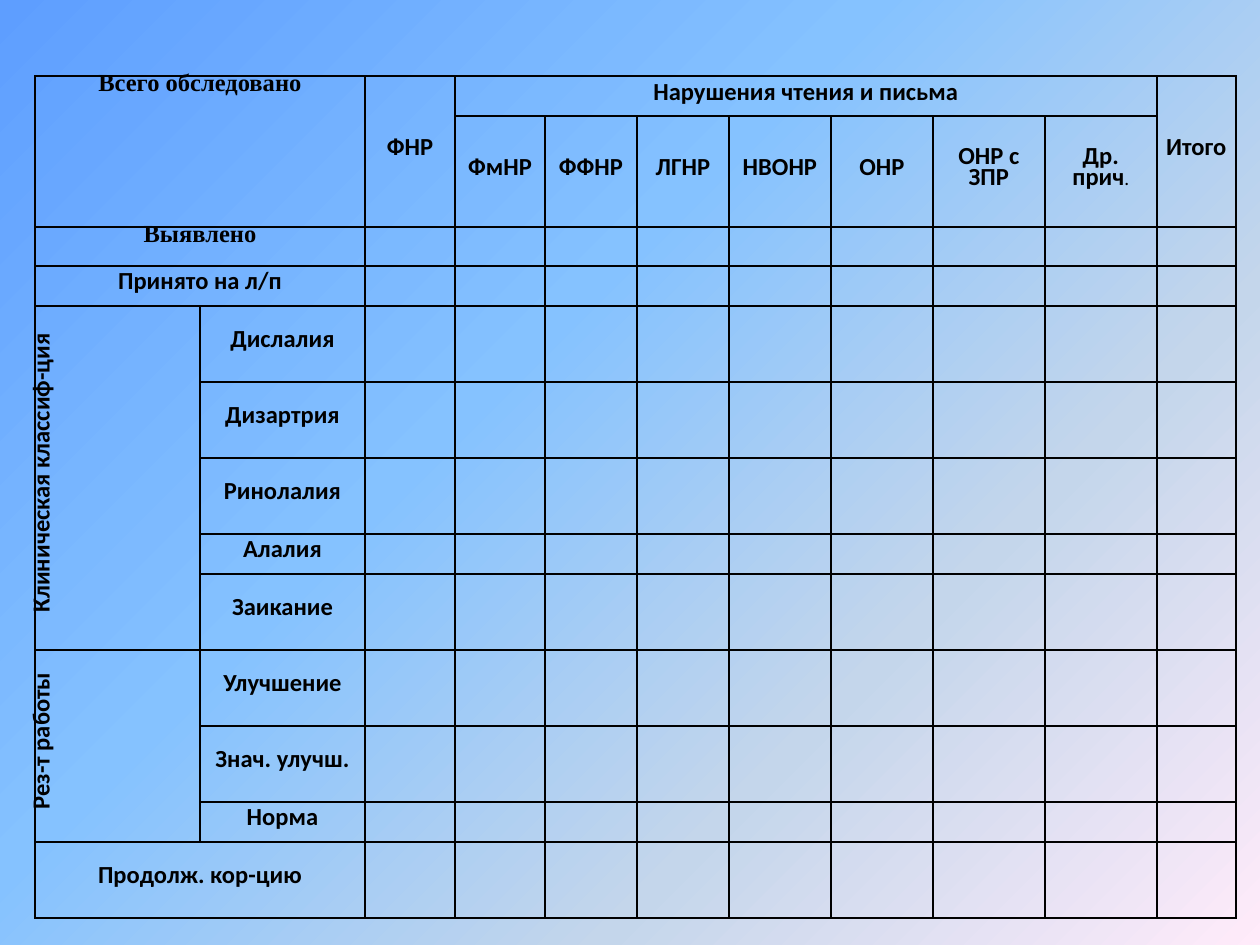
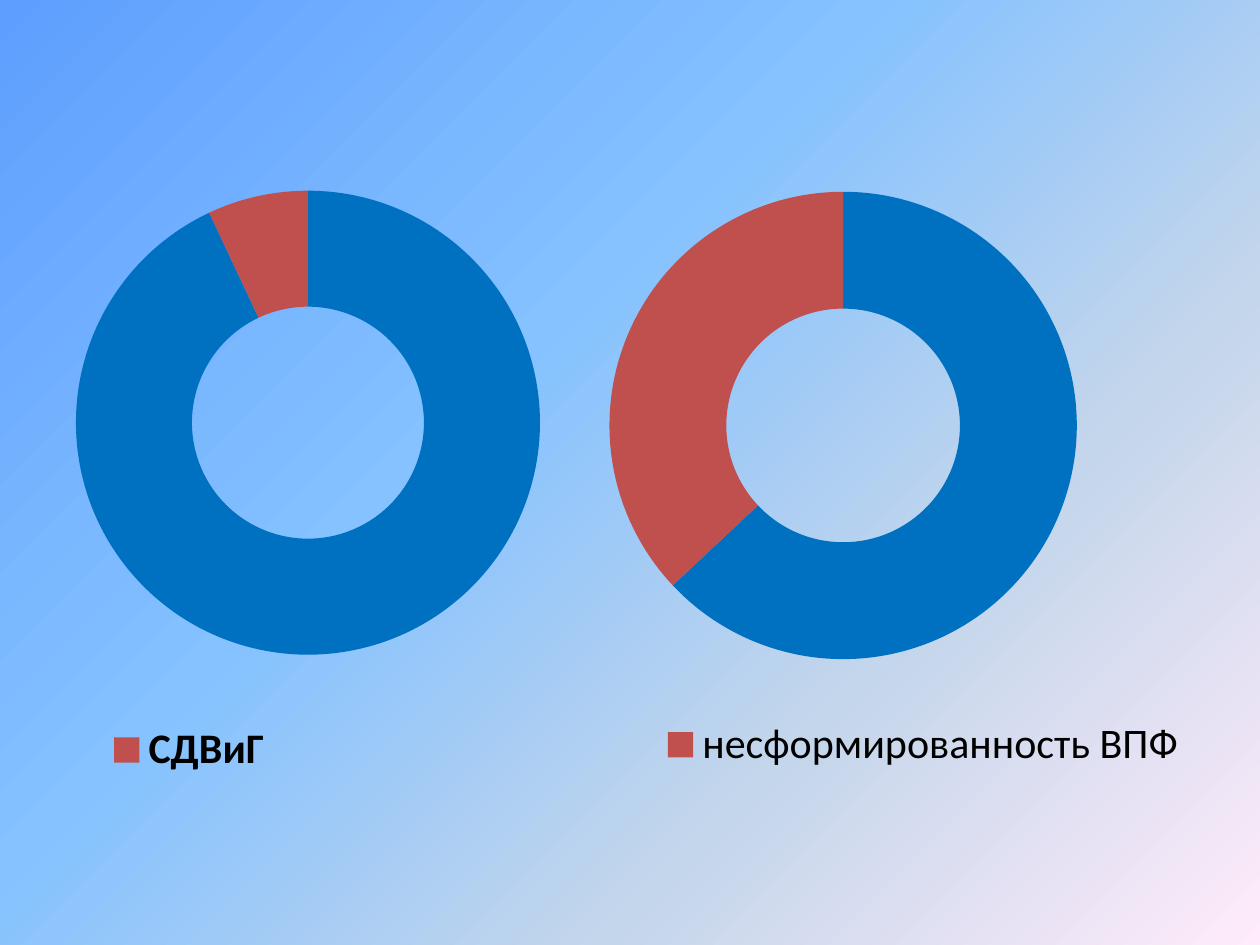
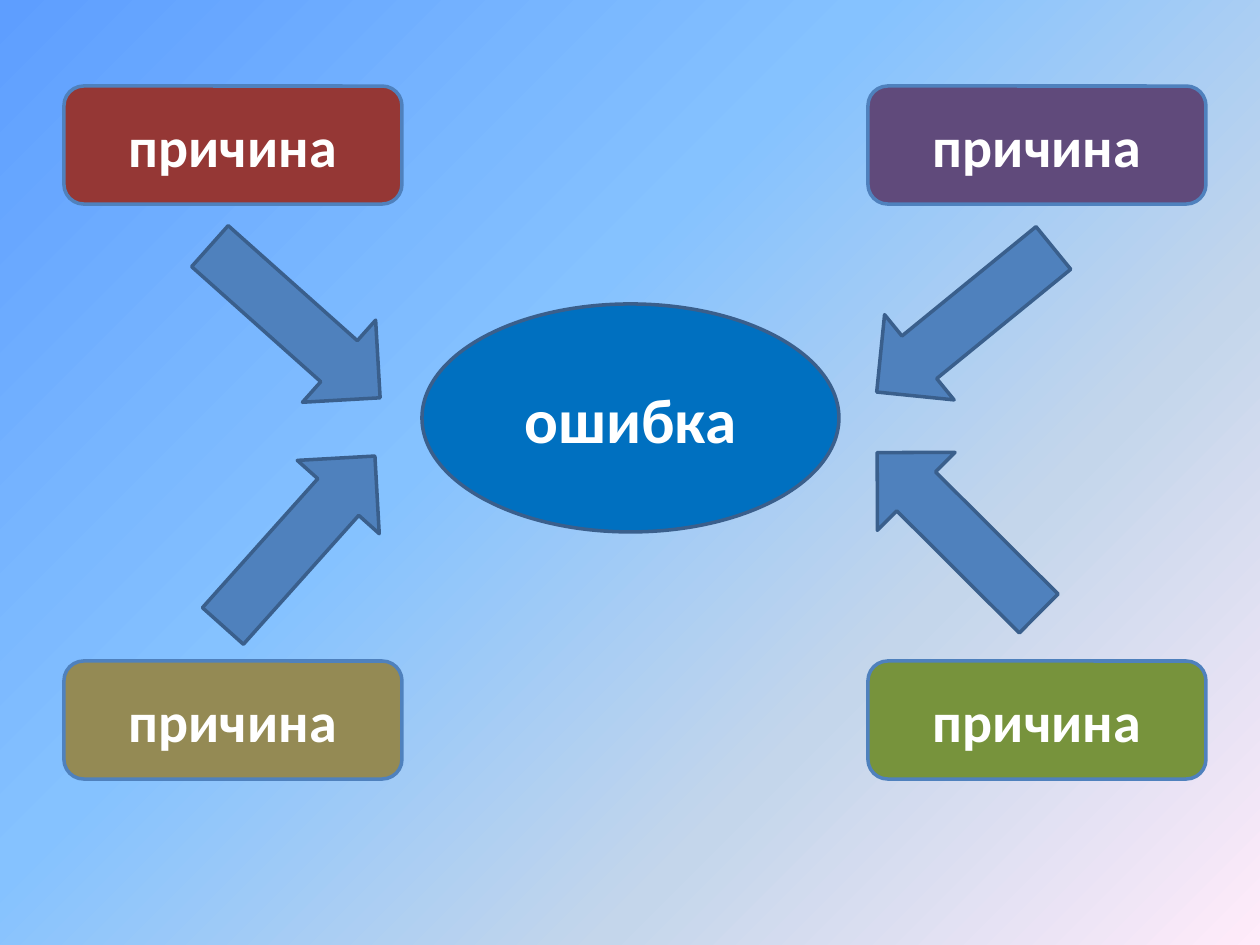
from dataclasses import dataclass

from lxml import etree
from pptx import Presentation, util as u
from pptx.chart.data import CategoryChartData
from pptx.dml.color import RGBColor
from pptx.enum import chart as charts, shapes, text
from pptx.oxml import ns

PX = 914400 / 126


@dataclass(frozen=True)
class Theme:
    backdrop: tuple = ((0, "5E9EFF"), (40, "85C2FF"), (70, "C4D6EB"), (100, "FFEBFA"))
    font: str = "Calibri"
    serif: str = "Times New Roman"
    ink: str = "000000"
    light: str = "FFFFFF"
    blue: str = "0070C0"
    red: str = "C0504D"
    accent: str = "4F81BD"
    accent_dark: str = "3A5F8C"
    outline: int = 2
    cell_size: int = 14
    dot_size: int = 11
    chart_size: int = 18
    legend_size: int = 24
    cause_size: int = 32
    error_size: int = 36


THEME = Theme()

COLUMNS = (165, 165, 90, 90, 92, 92, 102, 102, 112, 112, 79)
ROWS = (40, 111, 39, 40, 76, 76, 76, 40, 76, 76, 76, 40, 76)
DISORDERS = ("ФмНР", "ФФНР", "ЛГНР", "НВОНР", "ОНР", "ОНР с ЗПР")
DIAGNOSES = ("Дислалия", "Дизартрия", "Ринолалия", "Алалия", "Заикание",
             "Улучшение", "Знач. улучш.", "Норма")

CAUSES = ((64, 86, "953735"), (868, 661, "77933C"), (868, 86, "604A7B"), (64, 661, "948A54"))
ARROWS = ((181, 267, 41.7), (185, 486, 311.8), (851, 265, 140.8), (844, 478, 224.9))


def px(*lengths):
    return [u.Emu(round(length * PX)) for length in lengths]


def rgb(value):
    return RGBColor.from_string(value)


def set_font(font, size, color, bold=None, name=THEME.font):
    font.size, font.bold, font.name = u.Pt(size), bold, name
    font.color.rgb = rgb(color)


def add_run(paragraph, words, *style, **options):
    run = paragraph.add_run()
    run.text = words
    set_font(run.font, *style, **options)


def child(parent, tag, **attributes):
    return etree.SubElement(parent, ns.qn(tag), attributes)


def paint_background(master):
    """Give all slides one diagonal gradient with four stops."""
    fill = master.background.fill
    fill.gradient()
    fill.gradient_angle = 315
    stops = master.element.find(".//" + ns.qn("a:gsLst"))
    for stop in list(stops):
        stops.remove(stop)
    for percent, color in THEME.backdrop:
        stop = child(stops, "a:gs", pos=str(percent * 1000))
        child(stop, "a:srgbClr", val=color)


def style_cell(cell):
    properties = cell._tc.get_or_add_tcPr()
    for side in "LRTB":
        border = child(properties, f"a:ln{side}", w="12700")
        child(child(border, "a:solidFill"), "a:srgbClr", val=THEME.ink)
    cell.fill.background()
    cell.margin_left, cell.margin_right, cell.margin_top, cell.margin_bottom = px(7, 7, 0, 0)
    cell.text_frame.paragraphs[0].line_spacing = u.Pt(12)


def label(table, row, column, words, span=(1, 1), after=10, serif=False, upward=False):
    """Write a bold heading in a cell, merged over span (rows, columns)."""
    cell = table.cell(row, column)
    if span != (1, 1):
        cell.merge(table.cell(row + span[0] - 1, column + span[1] - 1))
    cell.vertical_anchor = text.MSO_ANCHOR.TOP if serif else text.MSO_ANCHOR.MIDDLE
    paragraph = cell.text_frame.paragraphs[0]
    paragraph.alignment = text.PP_ALIGN.CENTER
    paragraph.space_after = u.Pt(after)
    add_run(paragraph, words, THEME.cell_size, THEME.ink, True,
            name=THEME.serif if serif else THEME.font)
    if upward:
        cell._tc.get_or_add_tcPr().set("vert", "vert270")
        paragraph._p.get_or_add_pPr().set("marL", str(px(10)[0]))
    return cell


def add_survey_table(slide):
    frame = slide.shapes.add_table(len(ROWS), len(COLUMNS),
                                   *px(35, 76, sum(COLUMNS), sum(ROWS)))
    table = frame.table
    table.first_row = table.horz_banding = False
    for column, width in zip(table.columns, px(*COLUMNS)):
        column.width = width
    for row, height in zip(table.rows, px(*ROWS)):
        row.height = height
    for cell in table.iter_cells():
        style_cell(cell)

    label(table, 0, 0, "Всего обследовано", (2, 2), after=0, serif=True)
    label(table, 0, 2, "ФНР", (2, 1), after=0)
    label(table, 0, 3, "Нарушения чтения и письма", (1, 7))
    label(table, 0, 10, "Итого", (2, 1))
    for column, disorder in enumerate(DISORDERS, 3):
        label(table, 1, column, disorder)
    other = label(table, 1, 9, "Др. прич")
    other.margin_left, other.margin_right = px(9, 9)
    add_run(other.text_frame.paragraphs[0], ".", THEME.dot_size, THEME.ink, False)

    label(table, 2, 0, "Выявлено", (1, 2), after=0, serif=True)
    label(table, 3, 0, "Принято на л/п", (1, 2))
    label(table, 4, 0, "Клиническая классиф-ция", (5, 1), upward=True)
    label(table, 9, 0, "Рез-т работы", (3, 1), upward=True)
    for row, diagnosis in enumerate(DIAGNOSES, 4):
        label(table, row, 1, diagnosis, after=0 if row == 4 else 10)
    label(table, 12, 0, "Продолж. кор-цию", (1, 2))


def place(part, index, target, box):
    """Fix a chart part at box (x, y, w, h), as shares of the chart."""
    for old in part.findall(ns.qn("c:layout")):
        part.remove(old)
    layout = etree.Element(ns.qn("c:layout"))
    manual = child(layout, "c:manualLayout")
    if target:
        child(manual, "c:layoutTarget", val=target)
    for mode in ("xMode", "yMode"):
        child(manual, f"c:{mode}", val="edge")
    for key, share in zip("xywh", box):
        child(manual, f"c:{key}", val=str(share))
    part.insert(index, layout)


def add_ring(slide, box, finding, share, plot_box, legend_box, bold):
    """Draw a doughnut of one named finding and the unnamed rest, which has no legend key."""
    ring_data = CategoryChartData()
    ring_data.categories = ["", finding]
    ring_data.add_series("", (100 - share, share))
    chart = slide.shapes.add_chart(charts.XL_CHART_TYPE.DOUGHNUT, *px(*box), ring_data).chart
    chart.has_title = False
    set_font(chart.font, THEME.chart_size, THEME.ink)
    plot = chart.plots[0]
    plot.vary_by_categories = True
    for index, color in enumerate((THEME.blue, THEME.red)):
        fill = plot.series[0].points[index].format.fill
        fill.solid()
        fill.fore_color.rgb = rgb(color)
    place(chart._chartSpace.chart.plotArea, 0, "inner", plot_box)

    chart.has_legend = True
    legend = chart.legend
    legend.position = charts.XL_LEGEND_POSITION.RIGHT
    legend.include_in_layout = False
    set_font(legend.font, THEME.legend_size, THEME.ink, bold)
    place(legend._element, 1, None, legend_box)
    rest_entry = etree.Element(ns.qn("c:legendEntry"))
    child(rest_entry, "c:idx", val="0")
    child(rest_entry, "c:delete", val="1")
    legend._element.insert(1, rest_entry)


def add_figure(slide, kind, box, fill, line, words="", size=THEME.cause_size, rotation=0):
    figure = slide.shapes.add_shape(kind, *px(*box))
    figure.shadow.inherit = False
    figure.rotation = rotation
    figure.fill.solid()
    figure.fill.fore_color.rgb = rgb(fill)
    figure.line.color.rgb = rgb(line)
    figure.line.width = u.Pt(THEME.outline)
    if words:
        paragraph = figure.text_frame.paragraphs[0]
        paragraph.alignment = text.PP_ALIGN.CENTER
        figure.text_frame.vertical_anchor = text.MSO_ANCHOR.MIDDLE
        add_run(paragraph, words, size, THEME.light, True)


def add_cause_diagram(slide):
    kinds = shapes.MSO_SHAPE
    add_figure(slide, kinds.OVAL, (422, 304, 417, 228), THEME.blue, THEME.accent_dark,
               "ошибка", THEME.error_size)
    for x, y, color in CAUSES:
        add_figure(slide, kinds.ROUNDED_RECTANGLE, (x, y, 338, 118), color, THEME.accent,
                   "причина")
    for x, y, angle in ARROWS:
        add_figure(slide, kinds.RIGHT_ARROW, (x, y, 228, 110), THEME.accent,
                   THEME.accent_dark, rotation=angle)


def main():
    deck = Presentation()
    deck.slide_width, deck.slide_height = px(1260, 945)
    paint_background(deck.slide_master)
    survey, findings, causes = (deck.slides.add_slide(deck.slide_layouts[6]) for _ in range(3))
    add_survey_table(survey)
    add_ring(findings, (25, 106, 566, 704), "СДВиГ", 7,
             (0.09, 0.1, 0.82, 0.7), (0.13, 0.87, 0.32, 0.09), True)
    add_ring(findings, (591, 145, 615, 645), "несформированность ВПФ", 37,
             (0.03, 0.07, 0.76, 0.73), (0.1, 0.88, 0.88, 0.1), False)
    add_cause_diagram(causes)
    deck.save("out.pptx")


if __name__ == "__main__":
    main()
